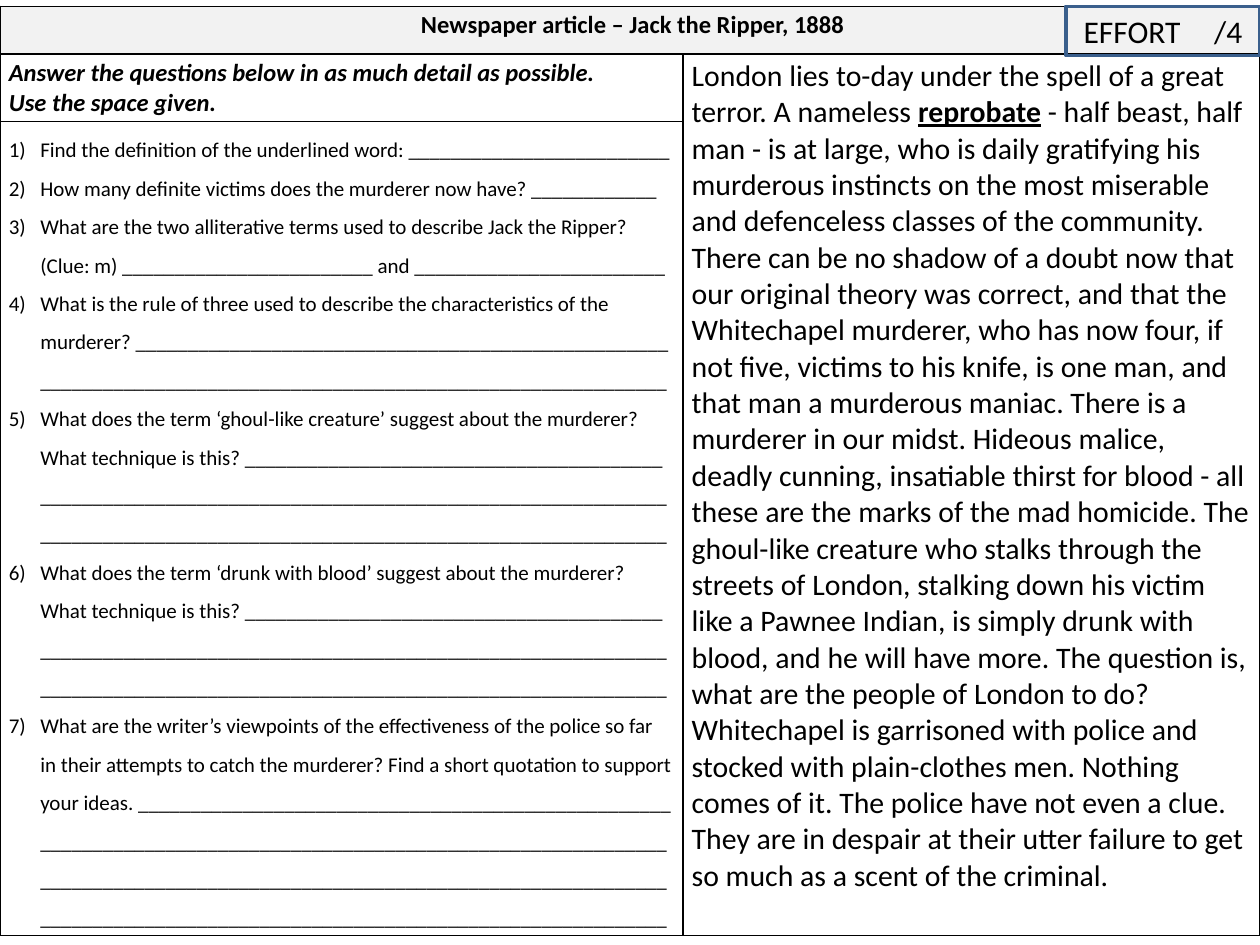
from dataclasses import dataclass

from lxml.etree import SubElement
from pptx import Presentation
from pptx.dml.color import RGBColor
from pptx.enum.shapes import MSO_SHAPE
from pptx.enum.text import MSO_ANCHOR, PP_ALIGN
from pptx.oxml.ns import qn
from pptx.util import Inches, Pt


@dataclass(frozen=True)
class Theme:
    font: str = "Calibri"
    ink: RGBColor = RGBColor(0x00, 0x00, 0x00)
    band: RGBColor = RGBColor(0xF2, 0xF2, 0xF2)
    frame: RGBColor = RGBColor(0x3A, 0x5F, 0x8C)
    title: int = 14
    article: int = 17
    question: int = 12
    effort: int = 18


THEME = Theme()


def blank(length):
    """An answer line of the given number of characters."""
    return "_" * length


# Content
TITLE = " Newspaper article – Jack the Ripper, 1888"
INSTRUCTIONS = [
    "Answer the questions below in as much detail as possible.",
    "Use the space given.",
]
LINE = 60  # characters in a full-width answer line
QUESTIONS = [
    f"Find the definition of the underlined word: {blank(25)}",
    f"How many definite victims does the murderer now have? {blank(12)}",
    "What are the two alliterative terms used to describe Jack the Ripper? "
    f"(Clue: m) {blank(24)} and {blank(24)}",
    "What is the rule of three used to describe the characteristics of the "
    f"murderer? {blank(51)} {blank(LINE)}",
    *(
        f"What does the term ‘{term}’ suggest about the murderer? "
        f"What technique is this? {blank(40)} {blank(2 * LINE)}"
        for term in ("ghoul-like creature", "drunk with blood")
    ),
    "What are the writer’s viewpoints of the effectiveness of the police so far "
    "in their attempts to catch the murderer? Find a short quotation to support "
    f"your ideas. {blank(51)} {blank(3 * LINE)}",
]
REPORT = [
    " - half beast, half man - is at large, who is daily gratifying his "
    "murderous instincts on the most miserable and defenceless classes of the "
    "community.",
    "There can be no shadow of a doubt now that our original theory was correct, "
    "and that the Whitechapel murderer, who has now four, if not five, victims "
    "to his knife, is one man, and that man a murderous maniac.",
    "There is a murderer in our midst.",
    "Hideous malice, deadly cunning, insatiable thirst for blood - all these are "
    "the marks of the mad homicide.",
    "The ghoul-like creature who stalks through the streets of London, stalking "
    "down his victim like a Pawnee Indian, is simply drunk with blood, and he "
    "will have more.",
    "The question is, what are the people of London to do?",
    "Whitechapel is garrisoned with police and stocked with plain-clothes men.",
    "Nothing comes of it.",
    "The police have not even a clue.",
    "They are in despair at their utter failure to get so much as a scent of the "
    "criminal.",
]
ARTICLE = [  # (text, is the key word)
    ("London lies to-day under the spell of a great terror. A nameless ", False),
    ("reprobate", True),
    (" ".join(REPORT), False),
]
EFFORT = "EFFORT\t/4"

# Grid, in inches
WIDTH, HEIGHT = 10, 7.5
TOP = 0.05
COLUMNS = [5.42, 4.58]
ROWS = [0.38, 0.41, 6.38]
EFFORT_WIDTH, EFFORT_HEIGHT, EFFORT_INSET = 1.54, 0.39, 0.14


def add_run(paragraph, text, size, bold=False, italic=False, underline=False):
    run = paragraph.add_run()
    run.text = text
    font = run.font
    font.name, font.size, font.color.rgb = THEME.font, Pt(size), THEME.ink
    font.bold, font.italic, font.underline = bold, italic, underline


def add_paragraphs(frame, count):
    """Return the frame's first paragraph and as many new ones as needed."""
    return [frame.paragraphs[0], *(frame.add_paragraph() for _ in range(count - 1))]


def number_paragraph(paragraph):
    properties = paragraph._p.get_or_add_pPr()
    properties.set("marL", str(Inches(0.25)))
    properties.set("indent", str(-Inches(0.25)))
    SubElement(properties, qn("a:buFont"), typeface="+mj-lt")
    SubElement(properties, qn("a:buAutoNum"), type="arabicParenR")


def add_right_tab(paragraph, position):
    tabs = SubElement(paragraph._p.get_or_add_pPr(), qn("a:tabLst"))
    SubElement(tabs, qn("a:tab"), pos=str(Inches(position)), algn="r")


def style_cell(cell):
    cell.margin_left = cell.margin_right = Inches(0.07)
    cell.margin_top = cell.margin_bottom = Inches(0.03)
    properties = cell._tc.get_or_add_tcPr()
    for side in ("lnL", "lnR", "lnT", "lnB"):
        border = SubElement(properties, qn(f"a:{side}"), w=str(Pt(1)))
        fill = SubElement(border, qn("a:solidFill"))
        SubElement(fill, qn("a:srgbClr"), val=str(THEME.ink))
    cell.fill.background()


def add_worksheet(slide):
    table = slide.shapes.add_table(
        len(ROWS), len(COLUMNS), 0, Inches(TOP), Inches(WIDTH), Inches(sum(ROWS))
    ).table
    table.first_row = table.horz_banding = False
    for column, width in zip(table.columns, COLUMNS):
        column.width = Inches(width)
    for row, height in zip(table.rows, ROWS):
        row.height = Inches(height)
    for cell in table.iter_cells():
        style_cell(cell)

    # Title band
    title = table.cell(0, 0)
    title.merge(table.cell(0, 1))
    title.fill.solid()
    title.fill.fore_color.rgb = THEME.band
    heading = title.text_frame.paragraphs[0]
    heading.alignment = PP_ALIGN.CENTER
    add_run(heading, TITLE, THEME.title, bold=True)

    # Instructions
    frame = table.cell(1, 0).text_frame
    for paragraph, text in zip(add_paragraphs(frame, len(INSTRUCTIONS)), INSTRUCTIONS):
        add_run(paragraph, text, THEME.title, bold=True, italic=True)

    # Numbered questions
    frame = table.cell(2, 0).text_frame
    for paragraph, text in zip(add_paragraphs(frame, len(QUESTIONS)), QUESTIONS):
        paragraph.line_spacing = 1.5
        number_paragraph(paragraph)
        add_run(paragraph, text, THEME.question)

    # Article
    article = table.cell(1, 1)
    article.merge(table.cell(2, 1))
    for text, key in ARTICLE:
        add_run(article.text_frame.paragraphs[0], text, THEME.article,
                bold=key, underline=key)


def add_effort_box(slide):
    box = slide.shapes.add_shape(
        MSO_SHAPE.RECTANGLE, Inches(WIDTH - EFFORT_WIDTH), Inches(TOP),
        Inches(EFFORT_WIDTH), Inches(EFFORT_HEIGHT),
    )
    box.shadow.inherit = False
    box.fill.background()
    box.line.color.rgb, box.line.width = THEME.frame, Pt(2)
    frame = box.text_frame
    frame.word_wrap = True
    frame.vertical_anchor = MSO_ANCHOR.MIDDLE
    frame.margin_left = Inches(EFFORT_INSET)
    frame.margin_right = Inches(EFFORT_INSET / 2)
    paragraph = frame.paragraphs[0]
    paragraph.alignment = PP_ALIGN.LEFT
    add_right_tab(paragraph, EFFORT_WIDTH - 2 * EFFORT_INSET)
    add_run(paragraph, EFFORT, THEME.effort)


def main():
    presentation = Presentation()
    presentation.slide_width = Inches(WIDTH)
    presentation.slide_height = Inches(HEIGHT)
    slide = presentation.slides.add_slide(presentation.slide_layouts[6])
    add_worksheet(slide)
    add_effort_box(slide)
    presentation.save("out.pptx")


if __name__ == "__main__":
    main()
